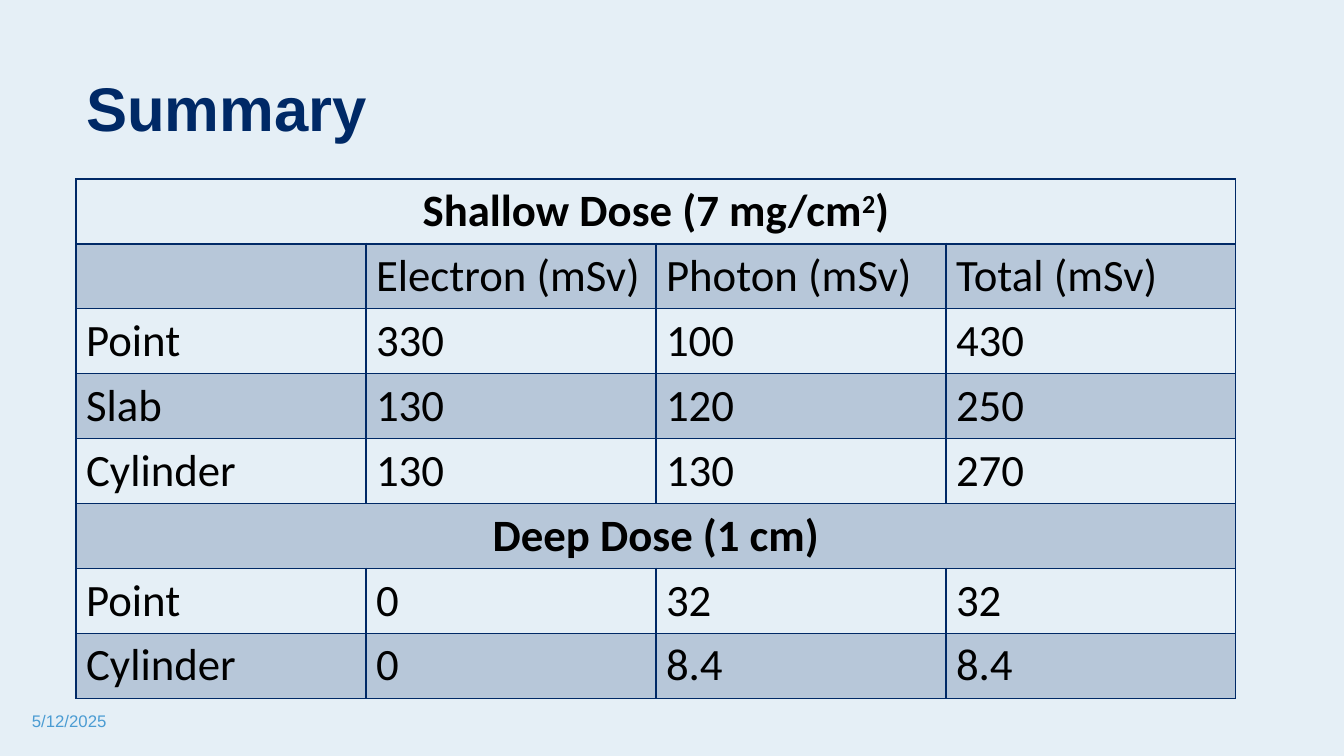
from lxml import etree
from pptx import Presentation
from pptx import util as u
from pptx.dml.color import RGBColor
from pptx.enum import text
from pptx.oxml import ns

PX = 914400 / 100.8
COLORS = {"ground": "E5EFF6", "navy": "002966", "ink": "000000", "date": "4B9CD3"}
DOSES = [
    ["Shallow Dose (7 mg/cm", "2", ")"],
    ["", "Electron (mSv)", "Photon (mSv)", "Total (mSv)"],
    ["Point", "330", "100", "430"],
    ["Slab", "130", "120", "250"],
    ["Cylinder", "130", "130", "270"],
    ["Deep Dose (1 cm)"],
    ["Point", "0", "32", "32"],
    ["Cylinder", "0", "8.4", "8.4"],
]
HEADINGS = (0, 5)
COLUMNS = 4


def px(n):
    return u.Emu(round(n * PX))


def rgb(name):
    return RGBColor.from_string(COLORS[name])


def style(font, name, size, color, bold=False):
    font.name, font.size, font.bold = name, u.Pt(size), bold
    font.color.rgb = rgb(color)


def add_title(slide, box):
    title = slide.shapes.title
    title.left, title.top, title.width, title.height = map(px, box)
    frame = title.text_frame
    frame.text = "Summary"
    frame.auto_size = text.MSO_AUTO_SIZE.NONE
    frame.vertical_anchor = text.MSO_ANCHOR.MIDDLE
    heading = frame.paragraphs[0]
    heading.alignment = text.PP_ALIGN.LEFT
    heading.line_spacing = 0.9
    style(heading.font, "Arial", 44, "navy", True)


def shade(cell, row):
    if row % 2 == 0:
        cell.fill.background()
        return
    cell.fill.solid()
    cell.fill.fore_color.rgb = rgb("navy")
    color = cell._tc.tcPr.find(".//" + ns.qn("a:srgbClr"))
    etree.SubElement(color, ns.qn("a:alpha"), val="20000")


def outline(cell, row):
    points = {"L": 1, "R": 1, "T": 2 if row == 1 else 1, "B": 2 if row == 0 else 1}
    properties = cell._tc.get_or_add_tcPr()
    for position, (side, width) in enumerate(points.items()):
        line = etree.Element(ns.qn("a:ln" + side), w=str(u.Pt(width)))
        fill = etree.SubElement(line, ns.qn("a:solidFill"))
        etree.SubElement(fill, ns.qn("a:srgbClr"), val=COLORS["navy"])
        properties.insert(position, line)


def write(cell, parts, heading):
    paragraph = cell.text_frame.paragraphs[0]
    paragraph.alignment = text.PP_ALIGN.CENTER if heading else text.PP_ALIGN.LEFT
    style(paragraph.font, "Calibri", 32, "ink", heading)
    for index, part in enumerate(parts):
        run = paragraph.add_run()
        run.text = part
        if index == 1:
            run.font._element.set("baseline", "30000")


def add_doses(slide, box):
    table = slide.shapes.add_table(len(DOSES), COLUMNS, *map(px, box)).table
    table.first_row = table.horz_banding = False
    for row, values in enumerate(DOSES):
        for column in range(COLUMNS):
            shade(table.cell(row, column), row)
            outline(table.cell(row, column), row)
        if row in HEADINGS:
            table.cell(row, 0).merge(table.cell(row, COLUMNS - 1))
            write(table.cell(row, 0), values, True)
            continue
        for column, value in enumerate(values):
            if value:
                write(table.cell(row, column), [value], False)


def add_date(slide, box):
    frame = slide.shapes.add_textbox(*map(px, box)).text_frame
    frame.word_wrap = True
    frame.vertical_anchor = text.MSO_ANCHOR.MIDDLE
    frame.text = "5/12/2025"
    style(frame.paragraphs[0].font, "Arial", 12, "date")


def main():
    deck = Presentation()
    deck.slide_width, deck.slide_height = px(1344), px(756)
    slide = deck.slides.add_slide(deck.slide_layouts[5])
    slide.background.fill.solid()
    slide.background.fill.fore_color.rgb = rgb("ground")
    add_title(slide, (76, 56, 1160, 111))
    add_doses(slide, (76, 179, 1160, 512))
    add_date(slide, (22, 701, 302, 40))
    deck.save("out.pptx")


if __name__ == "__main__":
    main()
